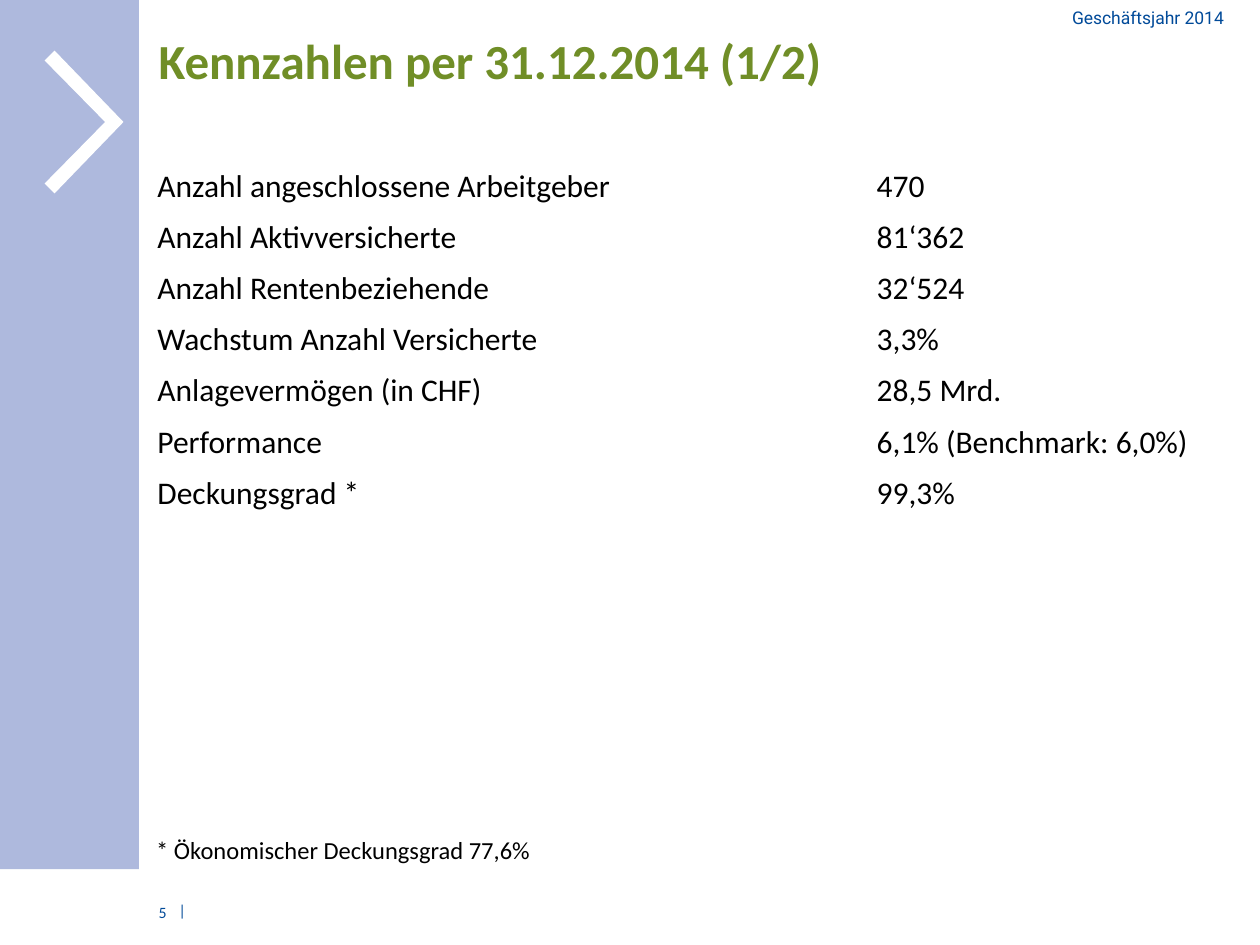
from pptx import Presentation
from pptx.dml.color import RGBColor
from pptx.enum import shapes, text
from pptx.util import Cm, Pt

COLORS = {
    "band": "AEB9DD",
    "white": "FFFFFF",
    "title": "708E27",
    "blue": "004A99",
    "black": "000000",
}

FIGURES = [
    ("Anzahl angeschlossene Arbeitgeber", "470"),
    ("Anzahl Aktivversicherte", "81‘362"),
    ("Anzahl Rentenbeziehende", "32‘524"),
    ("Wachstum Anzahl Versicherte", "3,3%"),
    ("Anlagevermögen (in CHF)", "28,5 Mrd."),
    ("Performance", "6,1% (Benchmark: 6,0%)"),
    ("Deckungsgrad *", "99,3%"),
]

CHEVRON = [(1.1, 1.02), (0.9, 1.22), (2.12, 2.46), (0.9, 3.7), (1.1, 3.9), (2.49, 2.46)]


class SlideBuilder:
    font = "Calibri"

    def __init__(self, page):
        self.page = page

    def color(self, name):
        return RGBColor.from_string(COLORS[name])

    def paint(self, shape, color):
        shape.shadow.inherit = False
        shape.fill.solid()
        shape.fill.fore_color.rgb = self.color(color)
        shape.line.fill.background()

    def rectangle(self, left, top, width, height, color):
        shape = self.page.shapes.add_shape(
            shapes.MSO_SHAPE.RECTANGLE, Cm(left), Cm(top), Cm(width), Cm(height))
        self.paint(shape, color)

    def outline(self, points, color):
        corners = [(Cm(x), Cm(y)) for x, y in points]
        builder = self.page.shapes.build_freeform(*corners[0])
        builder.add_line_segments(corners[1:], close=True)
        self.paint(builder.convert_to_shape(), color)

    def add_span(self, frame, words, size, color, bold=False, font=None):
        para = frame.paragraphs[0]
        span = para.add_run()
        span.text = words
        span.font.name = font or self.font
        span.font.size = Pt(size)
        span.font.bold = bold
        span.font.color.rgb = self.color(color)
        return para

    def label(self, left, top, width, height, words, size, color, bold=False,
              font=None, wrap=True, inset=(0, 0), align=text.PP_ALIGN.LEFT,
              anchor=text.MSO_ANCHOR.TOP):
        box = self.page.shapes.add_textbox(Cm(left), Cm(top), Cm(width), Cm(height))
        frame = box.text_frame
        frame.word_wrap = wrap
        frame.vertical_anchor = anchor
        frame.margin_left = frame.margin_right = Cm(inset[0])
        frame.margin_top = frame.margin_bottom = Cm(inset[1])
        para = self.add_span(frame, words, size, color, bold, font)
        para.alignment = align

    def table(self, left, top, widths, first_height, row_height, rows, size, color):
        height = first_height + row_height * (len(rows) - 1)
        table = self.page.shapes.add_table(
            len(rows), len(widths), Cm(left), Cm(top), Cm(sum(widths)), Cm(height)).table
        table.first_row = False
        table.horz_banding = False
        for column, width in zip(table.columns, widths):
            column.width = Cm(width)
        for index, (row, values) in enumerate(zip(table.rows, rows)):
            row.height = Cm(row_height if index else first_height)
            for cell, value in zip(row.cells, values):
                cell.fill.background()
                if value:
                    self.add_span(cell.text_frame, value, size, color)


def main():
    deck = Presentation()
    deck.slide_width = Cm(25.4)
    deck.slide_height = Cm(19.05)
    builder = SlideBuilder(deck.slides.add_slide(deck.slide_layouts[6]))

    builder.rectangle(0, 0, 2.8, 17.52, "band")
    builder.outline(CHEVRON, "white")
    builder.label(3.6, 18.16, 0.28, 0.53, "|", 9, "blue")
    builder.label(3.2, 0.61, 21.51, 2.34, "Kennzahlen per 31.12.2014 (1/2)", 28, "title", bold=True)
    empty = ("", "")
    builder.table(2.92, 2.13, (14.5, 7.01), 1.12, 1.03, [empty, *FIGURES, empty], 18, "black")
    builder.label(3.2, 18.19, 0.41, 0.48, "5", 9, "blue")
    builder.label(18.9, 0.2, 5.77, 0.36, "Geschäftsjahr 2014", 10, "blue", font="Roboto",
                  align=text.PP_ALIGN.RIGHT, anchor=text.MSO_ANCHOR.BOTTOM)
    builder.label(2.9, 16.71, 8.13, 0.86, "* Ökonomischer Deckungsgrad 77,6%", 14, "black",
                  wrap=False, inset=(0.25, 0.13))

    deck.save("out.pptx")


if __name__ == "__main__":
    main()
